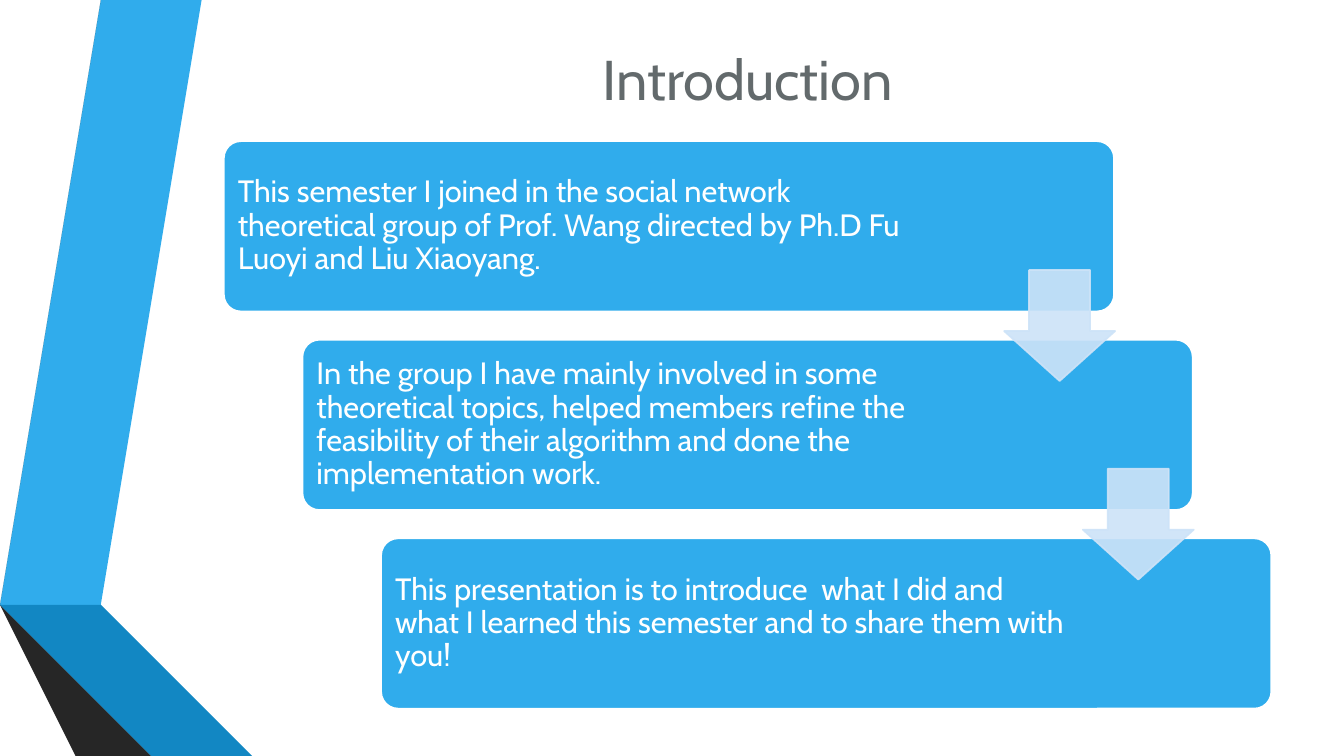
from pptx import Presentation
from pptx.dml.color import RGBColor
from pptx.enum.shapes import MSO_SHAPE as SHAPE
from pptx.enum.text import MSO_ANCHOR as ANCHOR, PP_ALIGN as ALIGN
from pptx.oxml.ns import qn
from pptx.util import Inches, Pt
from lxml import etree

BLUE, PALE, WHITE, GREY = "30ACEC", "CDE3F8", "FFFFFF", "636A6C"


def paint(fill, color, alpha=None):
    fill.solid()
    fill.fore_color.rgb = RGBColor.from_string(color)
    if alpha:
        for clr in fill._xPr.iter(qn("a:srgbClr")):
            etree.SubElement(clr, qn("a:alpha"), val=str(alpha * 1000))


def write(sp, text, size, color, align, **frame):
    tf = sp.text_frame
    frame = {"word_wrap": True, "vertical_anchor": ANCHOR.MIDDLE, **frame}
    for name, value in frame.items():
        setattr(tf, name, value)
    p = tf.paragraphs[0]
    p.alignment = align
    r = p.add_run()
    r.text = text
    for name, value in {"name": "Cabin", "size": Pt(size)}.items():
        setattr(r.font, name, value)
    paint(r.font.fill, color)
    return p


prs = Presentation()
prs.slide_width, prs.slide_height = Inches(13.33), Inches(7.5)
s = prs.slides.add_slide(prs.slide_layouts[5])
paint(s.background.fill, WHITE)

# Folded ribbons along the left edge
ribbons = [
    (BLUE, [(0.5, 5.78), (0.77, 5.83), (1.73, 0), (1.45, 0)]),
    ("595959", [(1.39, 0), (1.11, 0), (0.16, 5.73), (0.44, 5.77)]),
    ("262626", [(0.16, 5.73), (1.45, 7.5), (1.51, 7.5)]),
    ("0C5A82", [(0.5, 5.79), (2.08, 7.5), (2.14, 7.5)]),
    ("1287C3", [(0.5, 5.78), (2.14, 7.5), (2.83, 7.5), (0.77, 5.83)]),
    ("404040", [(2.02, 7.5), (0.48, 5.83), (0.43, 5.77), (0.16, 5.73), (1.51, 7.5)]),
]
for color, points in ribbons:
    (x0, y0), *rest = points
    ff = s.shapes.build_freeform(x0, y0, scale=Inches(1))
    ff.add_line_segments(rest, close=True)
    sp = ff.convert_to_shape()
    sp.shadow.inherit = False
    paint(sp.fill, color)
    sp.line.fill.background()

# Title
title = s.shapes.title
title.left, title.top, title.width, title.height = map(Inches, (3.24, 0.37, 8.35, 0.81))
write(title, "Introduction", 40, GREY, ALIGN.CENTER)

# Staircase of steps: each one moves right and down by the same amount
LEFT, TOP, WIDTH, HEIGHT = 2.22, 1.4, 8.83, 1.69
STEP_X, STEP_Y = 0.78, 1.97
steps = [
    ("This semester I joined in the social network theoretical group of "
     "Prof. Wang directed by Ph.D Fu Luoyi and Liu Xiaoyang.", 1.81),
    ("In the group I have mainly involved in some theoretical topics, helped "
     "members refine the feasibility of their algorithm and done the "
     "implementation work.", 1.96),
    ("This presentation is to introduce  what I did and what I learned this "
     "semester and to share them with you!", 1.96),
]
for i, (text, right) in enumerate(steps):
    sp = s.shapes.add_shape(SHAPE.ROUNDED_RECTANGLE, Inches(LEFT + i * STEP_X),
                            Inches(TOP + i * STEP_Y), Inches(WIDTH), Inches(HEIGHT))
    sp.adjustments[0] = 0.1
    sp.shadow.inherit = False
    paint(sp.fill, BLUE)
    paint(sp.line.fill, WHITE)
    sp.line.width = Pt(1.25)
    p = write(sp, text, 22, WHITE, ALIGN.LEFT, margin_left=Inches(0.09),
              margin_right=Inches(right), margin_top=Inches(0.09),
              margin_bottom=Inches(0.09))
    p.line_spacing = 0.9

# Arrows from each step to the next
for i in range(len(steps) - 1):
    sp = s.shapes.add_shape(SHAPE.DOWN_ARROW, Inches(9.96 + i * STEP_X),
                            Inches(2.68 + i * STEP_Y), Inches(1.1), Inches(1.1))
    sp.adjustments[0], sp.adjustments[1] = 0.55, 0.45
    sp.shadow.inherit = False
    paint(sp.fill, PALE, 90)
    paint(sp.line.fill, PALE, 90)
    sp.line.width = Pt(1.25)

prs.save("out.pptx")
